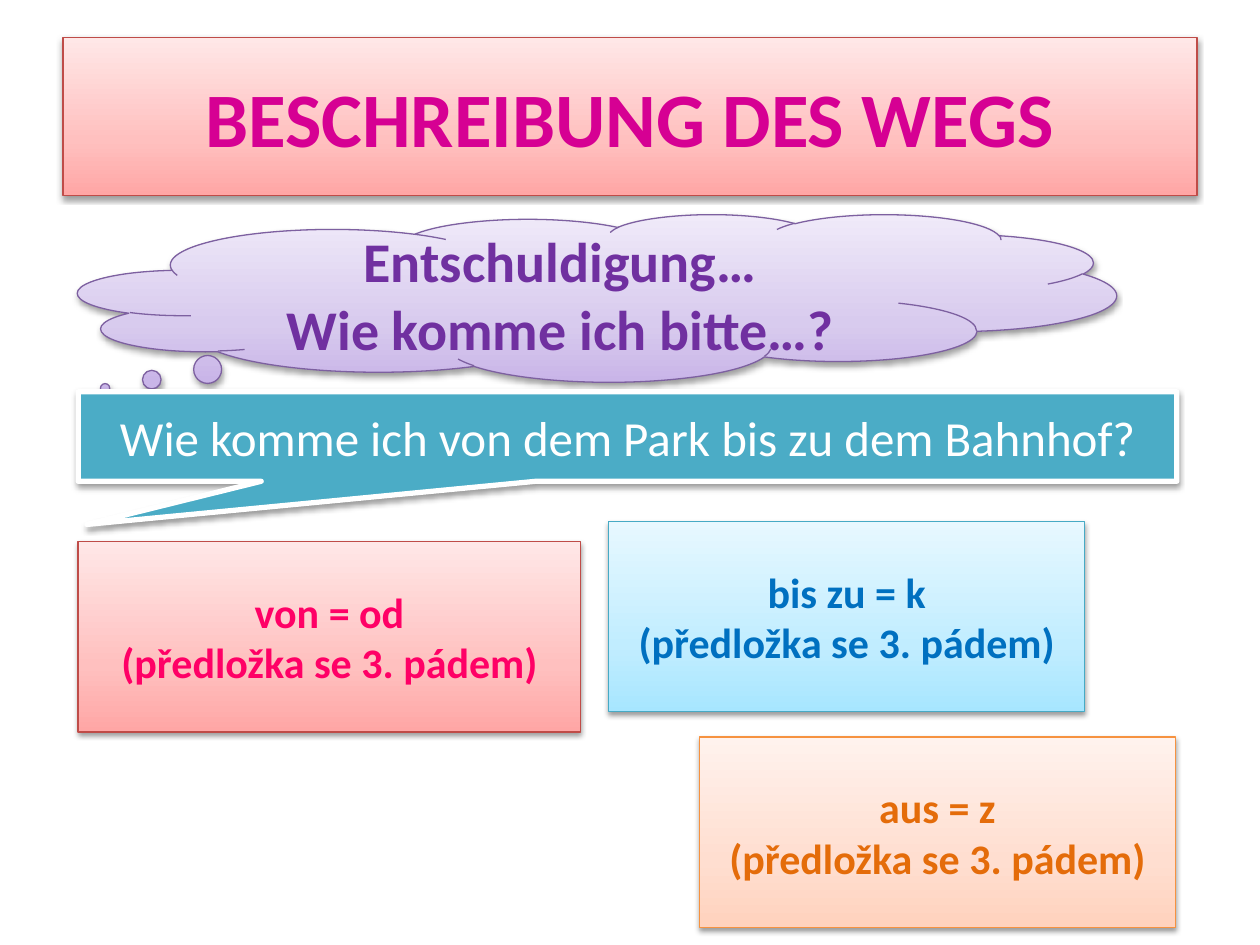
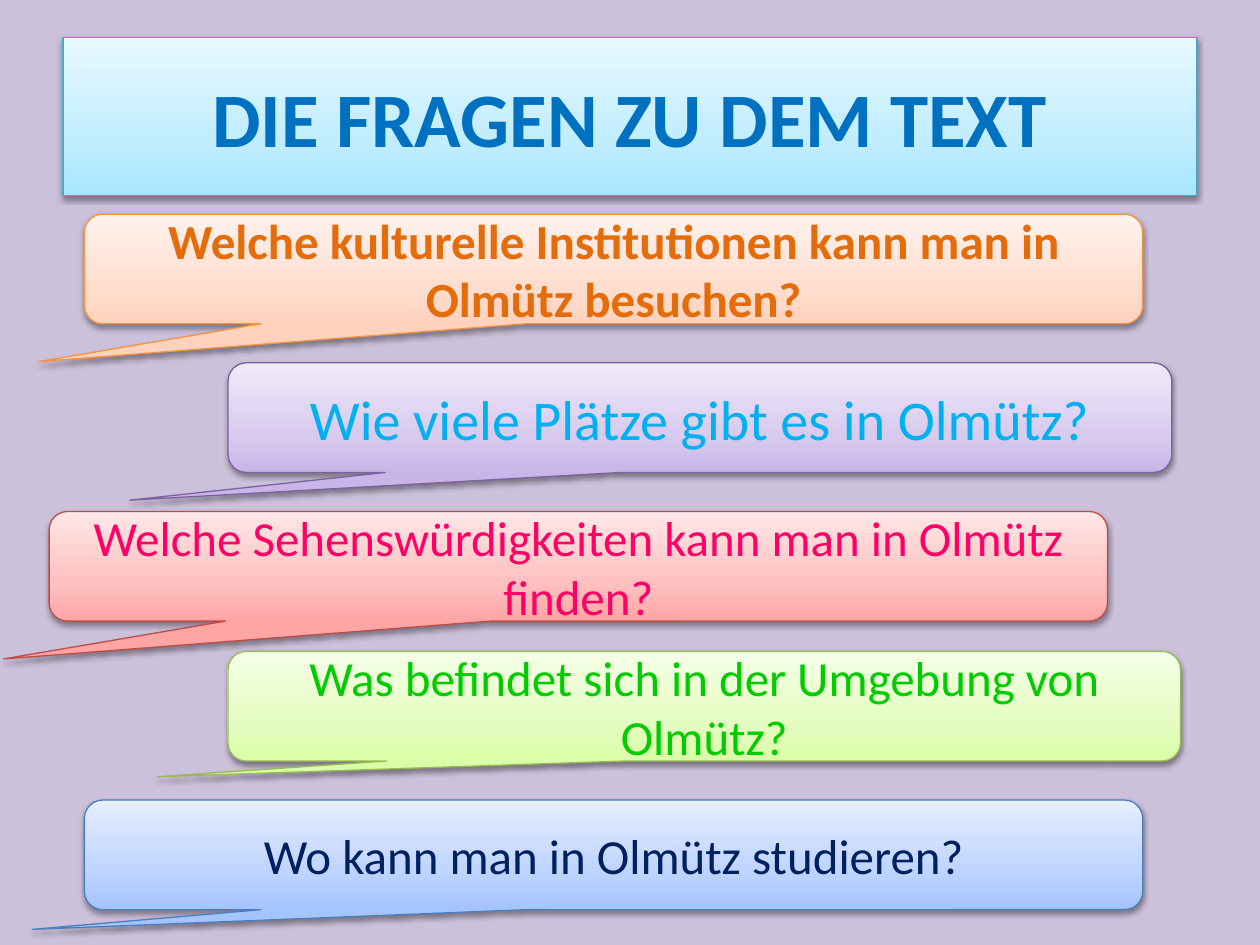
import copy
from collections import namedtuple
from dataclasses import dataclass

import lxml.etree
import pptx
import pptx.dml.color
import pptx.enum.shapes
import pptx.enum.text
import pptx.oxml.ns
import pptx.util

Pt = pptx.util.Pt
Preset = pptx.enum.shapes.MSO_SHAPE
Box = namedtuple("Box", "left top width height")
Finish = namedtuple("Finish", "stops line")
Lettering = namedtuple("Lettering", "size color bold")


@dataclass(frozen=True)
class Theme:
    font: str = "Calibri"
    title_size: int = 44
    large_size: int = 32
    question_size: int = 28
    card_size: int = 24
    thin_line: float = 0.75
    thick_line: float = 3
    stop_positions: tuple = (0, 0.35, 1)
    white: str = "FFFFFF"
    lilac: str = "CCC1DA"
    teal: str = "4BACC6"
    magenta: str = "D60093"
    violet: str = "7030A0"
    pink: str = "FF0066"
    blue: str = "0070C0"
    orange: str = "E46C0A"
    sky: str = "00B0F0"
    green: str = "00CC00"
    navy: str = "002060"
    rose_finish: Finish = Finish(("FFA6A5", "FFC0BF", "FFE7E7"), "BF4C48")
    purple_finish: Finish = Finish(("C9B5E8", "D8CBEE", "F0EAF9"), "7D60A0")
    aqua_finish: Finish = Finish(("A7E6FF", "C1EDFF", "E7F8FF"), "46AAC5")
    peach_finish: Finish = Finish(("FFD2BD", "FFDED0", "FFF2ED"), "F69240")
    lime_finish: Finish = Finish(("DAFDA7", "E4FCC2", "F5FFE7"), "98B955")
    azure_finish: Finish = Finish(("A4C4FF", "BFD4FF", "E6EEFF"), "4B7EBC")


THEME = Theme()
SLIDE_WIDTH, SLIDE_HEIGHT = 720, 540
TITLE_BOX = Box(36, 21.6, 648, 90)
CONTENT_BOX = Box(36, 122.4, 648, 410.4)


def rgb(color):
    return pptx.dml.color.RGBColor.from_string(color)


def inside(box, left, top, width, height):
    return Box(box.left + left, box.top + top, width, height)


def place(shape, box):
    shape.left, shape.top, shape.width, shape.height = map(Pt, box)


def fill_gradient(shape, colors):
    shape.fill.gradient()
    shape.fill.gradient_angle = 90
    stop_list = shape._element.spPr.find(".//" + pptx.oxml.ns.qn("a:gsLst"))
    stop_list.append(copy.deepcopy(stop_list[0]))
    for stop, position, color in zip(shape.fill.gradient_stops, THEME.stop_positions, colors):
        stop.position = position
        stop.color.rgb = rgb(color)


def cast_shadow(shape):
    shape.shadow.inherit = False
    qn = pptx.oxml.ns.qn
    effects = shape._element.spPr.find(qn("a:effectLst"))
    shadow = lxml.etree.SubElement(
        effects, qn("a:outerShdw"), blurRad=str(Pt(3.1)), dist=str(Pt(1.6)),
        dir="5400000", rotWithShape="0")
    color = lxml.etree.SubElement(shadow, qn("a:srgbClr"), val="000000")
    lxml.etree.SubElement(color, qn("a:alpha"), val="38000")


def finish_shape(shape, finish):
    fill_gradient(shape, finish.stops)
    shape.line.color.rgb = rgb(finish.line)
    shape.line.width = Pt(THEME.thin_line)
    cast_shadow(shape)


def write(shape, text, lettering):
    frame = shape.text_frame
    frame.text = text
    frame.word_wrap = True
    frame.vertical_anchor = pptx.enum.text.MSO_ANCHOR.MIDDLE
    for paragraph in frame.paragraphs:
        paragraph.alignment = pptx.enum.text.PP_ALIGN.CENTER
        for run in paragraph.runs:
            run.font.name = THEME.font
            run.font.size = Pt(lettering.size)
            run.font.bold = lettering.bold
            run.font.color.rgb = rgb(lettering.color)


def add_panel(slide, preset, box, text, lettering, finish, adjustments=()):
    shape = slide.shapes.add_shape(preset, *map(Pt, box))
    for index, value in enumerate(adjustments):
        shape.adjustments[index] = value
    finish_shape(shape, finish)
    write(shape, text, lettering)
    return shape


def add_titled_slide(presentation, background, text, color, finish):
    slide = presentation.slides.add_slide(presentation.slide_layouts[5])
    slide.background.fill.solid()
    slide.background.fill.fore_color.rgb = rgb(background)
    title = slide.shapes.title
    place(title, TITLE_BOX)
    finish_shape(title, finish)
    write(title, text, Lettering(THEME.title_size, color, True))
    return slide


def add_thought_cloud(slide, box):
    add_panel(slide, Preset.CLOUD_CALLOUT, inside(box, 8.64, 0, 593.28, 95.76),
              "Entschuldigung…\nWie komme ich bitte…?",
              Lettering(THEME.large_size, THEME.violet, True),
              THEME.purple_finish, (-0.474, 0.539))


def add_preposition_cards(slide, box):
    cards = (
        ("von = od", THEME.pink, THEME.rose_finish, 8.64, 187.2, 287.28),
        ("bis zu = k", THEME.blue, THEME.aqua_finish, 311.76, 175.68, 272.16),
        ("aus = z", THEME.orange, THEME.peach_finish, 363.6, 298.8, 272.16),
    )
    for meaning, color, finish, left, top, width in cards:
        add_panel(slide, Preset.RECTANGLE, inside(box, left, top, width, 108.72),
                  f"{meaning}\n(předložka se 3. pádem)",
                  Lettering(THEME.card_size, color, True), finish)


def add_example_question(slide, box):
    callout = add_panel(slide, Preset.RECTANGULAR_CALLOUT,
                        inside(box, 8.64, 101.52, 627.84, 51.12),
                        "Wie komme ich von dem Park bis zu dem Bahnhof?",
                        Lettering(THEME.question_size, THEME.white, False),
                        THEME.aqua_finish, (-0.492, 0.983))
    callout.fill.solid()
    callout.fill.fore_color.rgb = rgb(THEME.teal)
    callout.line.color.rgb = rgb(THEME.white)
    callout.line.width = Pt(THEME.thick_line)


def add_question_bubbles(slide, box):
    size = THEME.question_size
    bubbles = (
        ("Welche kulturelle Institutionen kann man in Olmütz besuchen?",
         Lettering(size, THEME.orange, True), THEME.peach_finish,
         12.24, 0, 604.8, (-0.543, 0.845)),
        ("Wie viele Plätze gibt es in Olmütz?",
         Lettering(THEME.large_size, THEME.sky, False), THEME.purple_finish,
         94.32, 84.96, 539.28, (-0.604, 0.753)),
        ("Welche Sehenswürdigkeiten kann man in Olmütz finden?",
         Lettering(size, THEME.pink, False), THEME.rose_finish,
         -7.92, 169.92, 604.8, (-0.543, 0.845)),
        ("Was befindet sich in der Umgebung von Olmütz?",
         Lettering(size, THEME.green, False), THEME.lime_finish,
         94.32, 249.84, 544.32, (-0.574, 0.643)),
        ("Wo kann man in Olmütz studieren?",
         Lettering(size, THEME.navy, False), THEME.azure_finish,
         12.24, 334.8, 604.8, (-0.549, 0.68)),
    )
    for text, lettering, finish, left, top, width, tail in bubbles:
        add_panel(slide, Preset.ROUNDED_RECTANGULAR_CALLOUT,
                  inside(box, left, top, width, 62.64), text, lettering, finish, tail)


def build_directions_slide(presentation):
    slide = add_titled_slide(presentation, THEME.white, "BESCHREIBUNG DES WEGS",
                             THEME.magenta, THEME.rose_finish)
    add_thought_cloud(slide, CONTENT_BOX)
    add_preposition_cards(slide, CONTENT_BOX)
    add_example_question(slide, CONTENT_BOX)


def build_questions_slide(presentation):
    slide = add_titled_slide(presentation, THEME.lilac, "DIE FRAGEN ZU DEM TEXT",
                             THEME.blue, THEME.aqua_finish)
    add_question_bubbles(slide, CONTENT_BOX)


def main():
    presentation = pptx.Presentation()
    presentation.slide_width = Pt(SLIDE_WIDTH)
    presentation.slide_height = Pt(SLIDE_HEIGHT)
    build_directions_slide(presentation)
    build_questions_slide(presentation)
    presentation.save("out.pptx")


if __name__ == "__main__":
    main()
